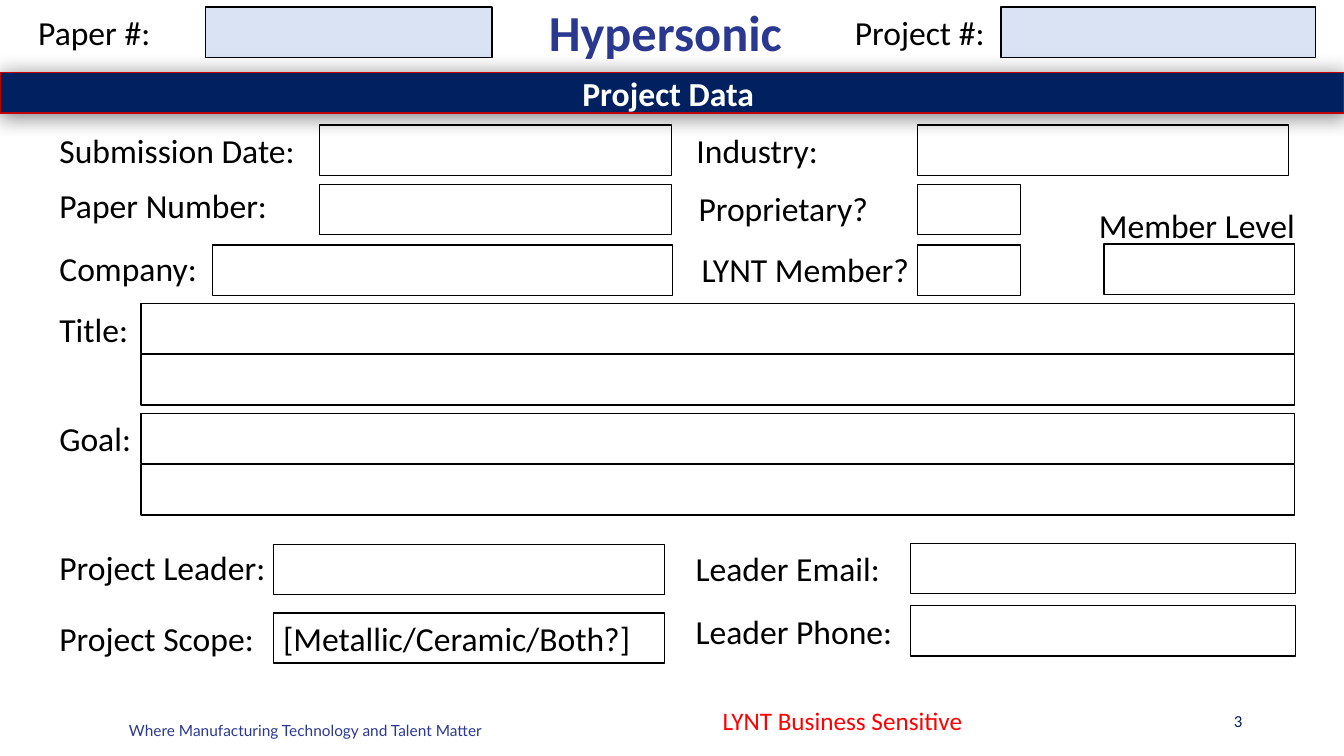
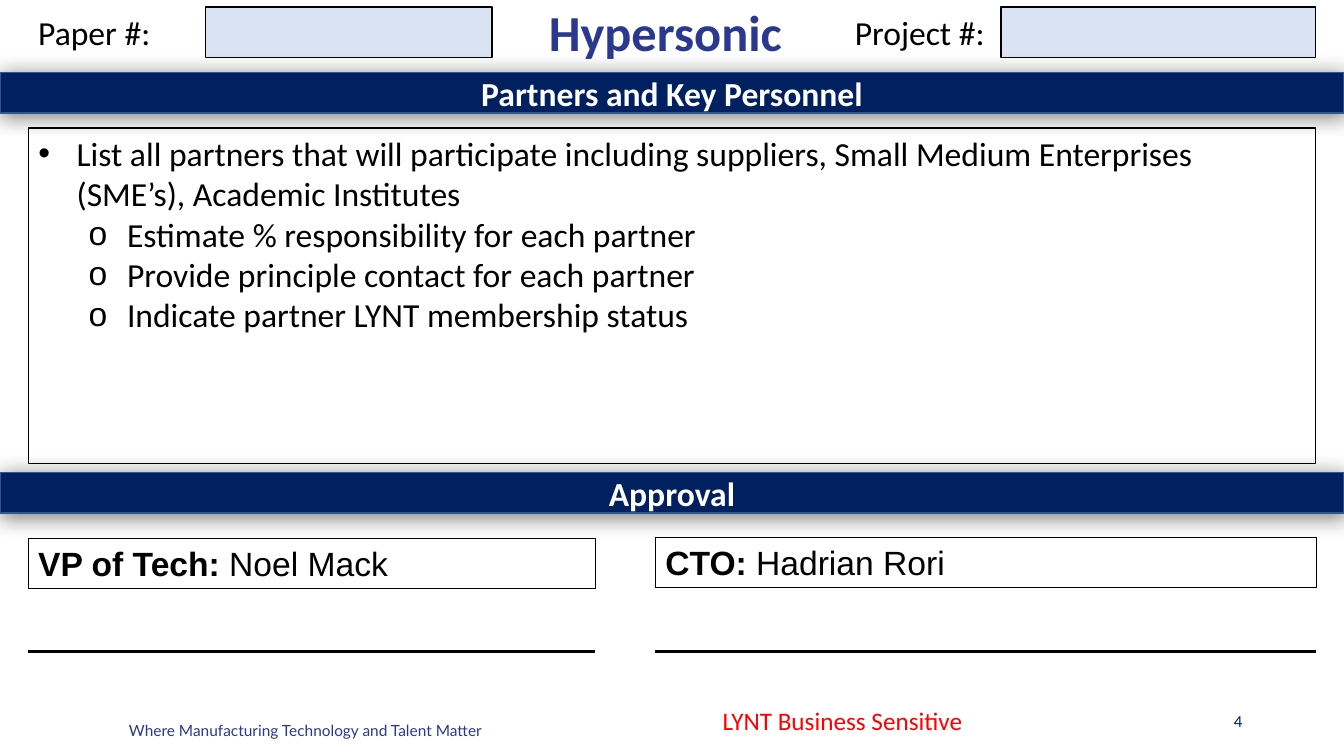
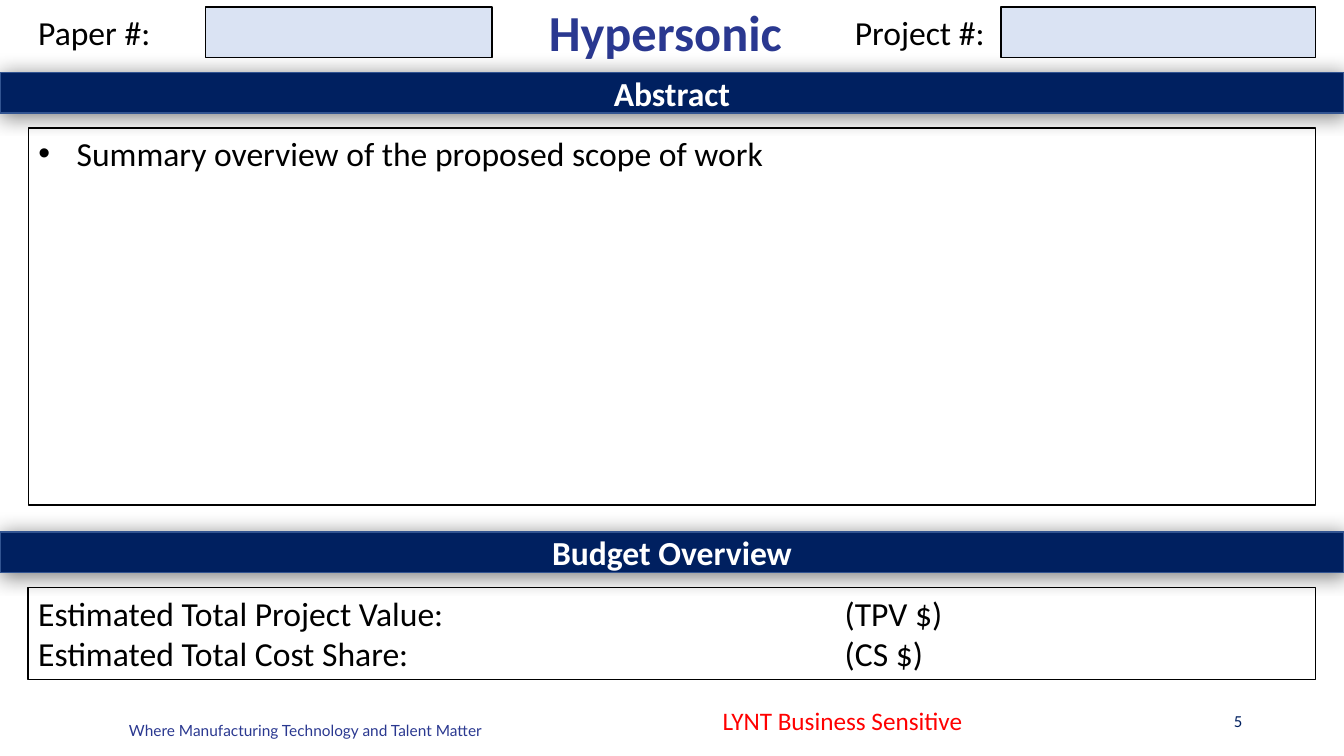
import pptx
import pptx.dml.color
import pptx.enum.shapes
import pptx.enum.text
import pptx.oxml
import pptx.oxml.ns
import pptx.util
from pptx.util import Inches

RGB = pptx.dml.color.RGBColor
ALIGN = pptx.enum.text.PP_ALIGN
ANCHOR = pptx.enum.text.MSO_ANCHOR
SHAPES = pptx.enum.shapes.MSO_SHAPE

BLACK = RGB(0, 0, 0)
WHITE = RGB(0xFF, 0xFF, 0xFF)
NAVY = RGB(0x00, 0x20, 0x60)
INDIGO = RGB(0x2A, 0x38, 0x90)
BAND_EDGE = RGB(0x32, 0x54, 0x91)
DARK_RED = RGB(0xC0, 0, 0)
RED = RGB(0xFF, 0, 0)
PALE_BLUE = RGB(0xDA, 0xE3, 0xF3)

SLIDE_WIDTH, SLIDE_HEIGHT = 13.33, 7.5
MARGIN = 0.28
CONTENT_WIDTH = SLIDE_WIDTH - 2 * MARGIN
FIELD_HEIGHT = 0.5
BAND_TOP, BAND_HEIGHT = 0.72, 0.4
BODY_TOP = 1.27
SIGNATURE_TOP = 6.46
FIRST_NUMBER = 3
TITLE_ONLY, TITLE_AND_BODY = 5, 1

TITLE = "Hypersonic"
TAGLINE = "Where Manufacturing Technology and Talent Matter"
SENSITIVITY = "LYNT Business Sensitive"

# Labels: text, left, top, width.  Entries: left, top, width.
HEADER_LABELS = [("Paper #:", MARGIN, 0.07, 1.76), ("Project #:", 8.38, 0.07, 1.52)]
HEADER_ENTRIES = [(2.04, 0.07, 2.84), (9.93, 0.07, 3.12)]

FORM_LABELS = [
    ("Submission Date:", 0.49, 1.24, 2.81),
    ("Paper Number:", 0.49, 1.79, 2.81),
    ("Company:", 0.49, 2.41, 1.78),
    ("Title:", 0.49, 3.02, 0.92),
    ("Goal:", 0.49, 4.1, 0.92),
    ("Project Leader:", 0.49, 5.38, 2.56),
    ("Project Scope:", 0.49, 6.08, 2.56),
    ("Industry:", 6.81, 1.24, 1.44),
    ("Proprietary?", 6.83, 1.82, 2.06),
    ("LYNT Member?", 6.86, 2.42, 2.81),
    ("Member Level", 10.8, 1.98, 2.22),
    ("Leader Email:", 6.8, 5.39, 2.08),
    ("Leader Phone:", 6.8, 6.01, 2.22),
]
FORM_ENTRIES = [
    (3.17, 1.24, 3.49), (3.17, 1.83, 3.49), (2.11, 2.43, 4.56),
    (9.1, 1.24, 3.68), (9.1, 1.83, 1.02), (9.1, 2.43, 1.02), (10.95, 2.42, 1.89),
    (1.4, 3.01, 11.44), (1.4, 3.52, 11.44),
    (1.4, 4.1, 11.44), (1.4, 4.61, 11.44),
    (2.71, 5.4, 3.88), (9.03, 5.39, 3.82), (9.03, 6.01, 3.82),
]
SCOPE_ENTRY = (2.71, 6.08, 3.88)
SCOPE_TEXT = "[Metallic/Ceramic/Both?]"

# Bullets: level, text.
PARTNER_BULLETS = [
    (0, "List all partners that will participate including suppliers, "
        "Small Medium Enterprises (SME’s), Academic Institutes"),
    (1, "Estimate % responsibility for each partner"),
    (1, "Provide principle contact for each partner"),
    (1, "Indicate partner LYNT membership status"),
]
ABSTRACT_BULLETS = [(0, "Summary overview of the proposed scope of work")]
BULLET_SYMBOLS = "•o"

# Approvers: role, name, left, top, width.
APPROVERS = [
    ("VP of Tech:", " Noel Mack", MARGIN, 5.34, 5.62),
    ("CTO:", " Hadrian Rori", 6.5, 5.33, 6.55),
]
BUDGET_LINES = [
    "Estimated Total Project Value:\t(TPV $)",
    "Estimated Total Cost Share:\t(CS $)",
]
BUDGET_TAB = 8


def xml(markup):
    opening, rest = markup.split(" ", 1)
    return pptx.oxml.parse_xml(f"{opening} {pptx.oxml.ns.nsdecls('a')} {rest}")


def write(para, text, size=24, font="Calibri", color=BLACK, bold=False, align=ALIGN.LEFT):
    para.alignment = align
    span = para.add_run()
    span.text = text
    span.font.size = pptx.util.Pt(size)
    span.font.name = font
    span.font.color.rgb = color
    span.font.bold = bold


def place(shape, left, top, width, height):
    shape.left, shape.top = Inches(left), Inches(top)
    shape.width, shape.height = Inches(width), Inches(height)


def outline(shape, color=BLACK, width=1):
    shape.line.color.rgb = color
    shape.line.width = pptx.util.Pt(width)


def add_text(page, text, left, top, width, height=FIELD_HEIGHT, anchor=ANCHOR.TOP, **style):
    box = page.shapes.add_textbox(Inches(left), Inches(top), Inches(width), Inches(height))
    box.text_frame.word_wrap = True
    box.text_frame.vertical_anchor = anchor
    write(box.text_frame.paragraphs[0], text, **style)


def add_box(page, left, top, width, height=FIELD_HEIGHT, fill=None, edge=BLACK, weight=1,
            anchor=ANCHOR.TOP):
    box = page.shapes.add_shape(SHAPES.RECTANGLE, Inches(left), Inches(top),
                                Inches(width), Inches(height))
    box.shadow.inherit = False
    if fill is None:
        box.fill.background()
    else:
        box.fill.solid()
        box.fill.fore_color.rgb = fill
    outline(box, edge, weight)
    box.text_frame.word_wrap = True
    box.text_frame.vertical_anchor = anchor
    return box


def add_band(page, text, top=BAND_TOP, edge=BAND_EDGE):
    band = add_box(page, 0, top, SLIDE_WIDTH, BAND_HEIGHT, NAVY, edge, anchor=ANCHOR.MIDDLE)
    write(band.text_frame.paragraphs[0], text, color=WHITE, bold=True, align=ALIGN.CENTER)
    effects = band.element.spPr.find(pptx.oxml.ns.qn("a:effectLst"))
    effects.append(xml(
        '<a:outerShdw blurRad="190500" dist="12700" dir="5400000" algn="ctr" rotWithShape="0">'
        '<a:srgbClr val="000000"><a:alpha val="50000"/></a:srgbClr></a:outerShdw>'))


def add_page(deck, layout, number):
    """Add a slide with the shared title, header fields and footer."""
    page = deck.slides.add_slide(deck.slide_layouts[layout])
    title = page.shapes.title
    place(title, 2.89, 0.03, 7.42, 0.72)
    title.text_frame.vertical_anchor = ANCHOR.TOP
    title.text_frame.auto_size = pptx.enum.text.MSO_AUTO_SIZE.NONE
    para = title.text_frame.paragraphs[0]
    para.line_spacing = 0.9
    write(para, TITLE, size=36, color=INDIGO, bold=True, align=ALIGN.CENTER)

    for label in HEADER_LABELS:
        add_text(page, *label)
    for entry in HEADER_ENTRIES:
        add_box(page, *entry, fill=PALE_BLUE)
    add_text(page, TAGLINE, 1.18, 7.1, 4.27, 0.29, size=11, font="Lato", color=INDIGO)
    add_text(page, SENSITIVITY, 7.07, 6.95, 4.5, 0.4, size=18, color=RED)
    add_text(page, str(number), 9.42, 6.95, 3, 0.4, anchor=ANCHOR.MIDDLE,
             size=12, color=NAVY, align=ALIGN.RIGHT)
    return page


def fill_body(page, bullets, height):
    body = page.placeholders[1]
    place(body, MARGIN, BODY_TOP, CONTENT_WIDTH, height)
    outline(body)
    frame = body.text_frame
    frame.auto_size = pptx.enum.text.MSO_AUTO_SIZE.NONE
    for index, (level, text) in enumerate(bullets):
        para = frame.add_paragraph() if index else frame.paragraphs[0]
        para.level = level
        para.space_before = pptx.util.Pt(0)
        properties = para._p.get_or_add_pPr()
        properties.set("marL", str(Inches(0.38 + 0.5 * level)))
        properties.set("indent", str(Inches(-0.38)))
        properties.append(xml('<a:buFont typeface="Arial"/>'))
        properties.append(xml(f'<a:buChar char="{BULLET_SYMBOLS[level]}"/>'))
        write(para, text)


def add_signature_line(page, left, width):
    line = page.shapes.add_connector(
        pptx.enum.shapes.MSO_CONNECTOR.STRAIGHT, Inches(left), Inches(SIGNATURE_TOP),
        Inches(left + width), Inches(SIGNATURE_TOP))
    outline(line, width=2.25)
    line.element.spPr.append(xml("<a:effectLst />"))


def build_project_data(deck):
    page = add_page(deck, TITLE_ONLY, FIRST_NUMBER)
    add_band(page, "Project Data ", edge=DARK_RED)
    for label in FORM_LABELS:
        add_text(page, *label)
    for entry in FORM_ENTRIES:
        add_box(page, *entry)
    scope = add_box(page, *SCOPE_ENTRY)
    write(scope.text_frame.paragraphs[0], SCOPE_TEXT)


def build_partners(deck):
    page = add_page(deck, TITLE_AND_BODY, FIRST_NUMBER + 1)
    add_band(page, "Partners and Key Personnel")
    fill_body(page, PARTNER_BULLETS, 3.33)
    add_band(page, "Approval", top=4.69)
    for role, name, left, top, width in APPROVERS:
        para = add_box(page, left, top, width, weight=0.25).text_frame.paragraphs[0]
        write(para, role, font="Arial", bold=True)
        write(para, name, font="Arial")
        add_signature_line(page, left, width)


def build_abstract(deck):
    page = add_page(deck, TITLE_AND_BODY, FIRST_NUMBER + 2)
    add_band(page, "Abstract")
    fill_body(page, ABSTRACT_BULLETS, 3.74)
    add_band(page, "Budget Overview", top=5.28)
    frame = add_box(page, MARGIN, 5.83, CONTENT_WIDTH, 0.91).text_frame
    for index, text in enumerate(BUDGET_LINES):
        para = frame.add_paragraph() if index else frame.paragraphs[0]
        para._p.get_or_add_pPr().append(xml(
            f'<a:tabLst ><a:tab pos="{Inches(BUDGET_TAB)}" algn="l"/></a:tabLst>'))
        write(para, text)


def main():
    deck = pptx.Presentation()
    deck.slide_width, deck.slide_height = Inches(SLIDE_WIDTH), Inches(SLIDE_HEIGHT)
    build_project_data(deck)
    build_partners(deck)
    build_abstract(deck)
    deck.save("out.pptx")


if __name__ == "__main__":
    main()
